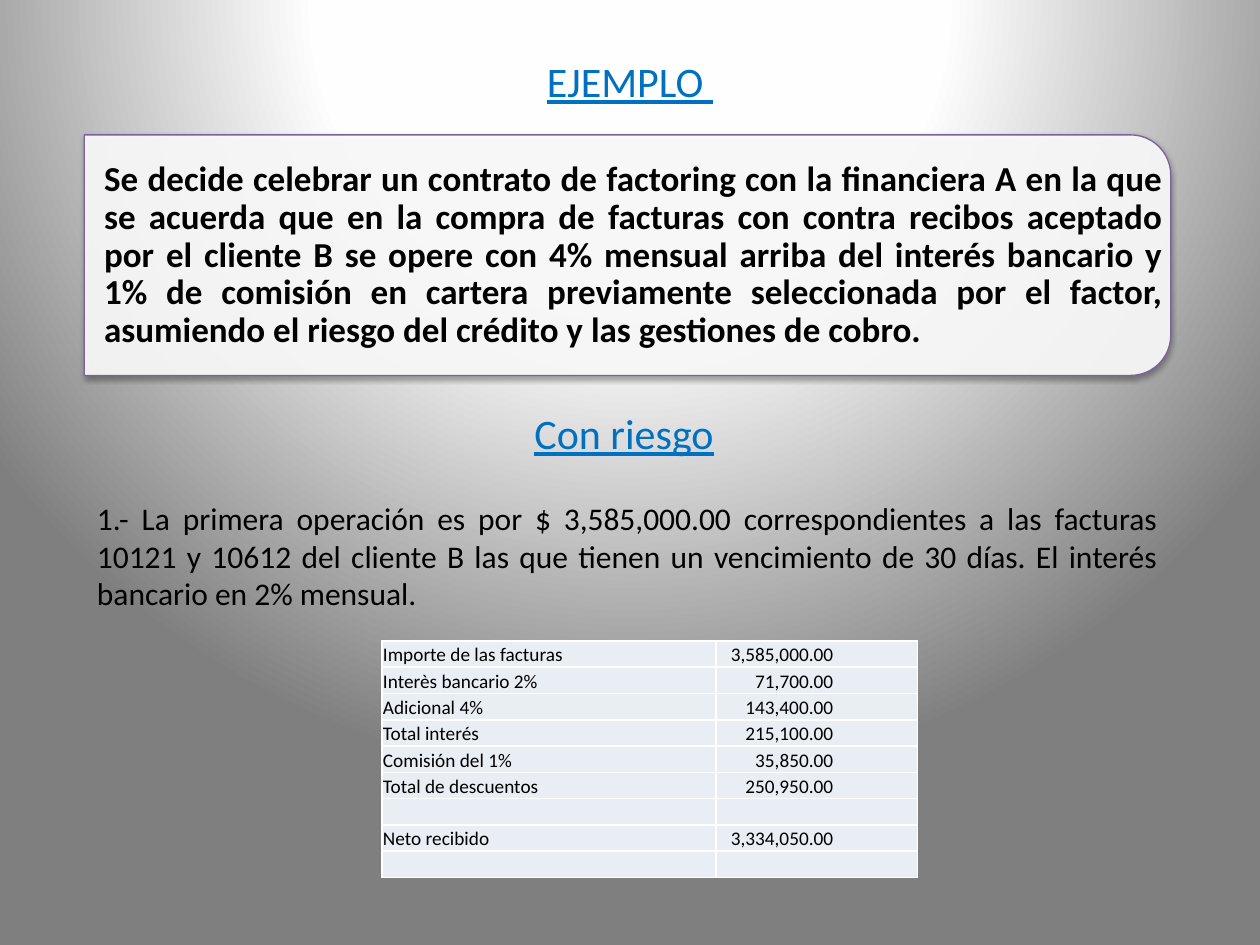
import dataclasses

import lxml.etree as etree
import pptx
import pptx.dml.color
import pptx.enum.shapes
import pptx.enum.text
import pptx.oxml
import pptx.oxml.ns
import pptx.util

Cm = pptx.util.Cm
Pt = pptx.util.Pt
qn = pptx.oxml.ns.qn
Align = pptx.enum.text.PP_ALIGN
Anchor = pptx.enum.text.MSO_ANCHOR
RGBColor = pptx.dml.color.RGBColor


@dataclasses.dataclass(frozen=True)
class Theme:
    font: str = "Calibri"
    heading: str = "0070C0"
    text: str = "000000"
    panel: str = "FFFFFF"
    panel_line: str = "7D60A0"
    cell: str = "E9EDF4"
    border: str = "FFFFFF"
    background: tuple = ((0, "FFFFFF"), (40, "FEFEFE"), (100, "7F7F7F"))
    heading_size: int = 24
    statement_size: int = 20
    body_size: int = 18
    table_size: int = 11


THEME = Theme()

STATEMENT = (
    "Se decide celebrar un contrato de factoring con la financiera A en la que "
    "se acuerda que en la compra de facturas con contra recibos aceptado por el "
    "cliente B se opere con 4% mensual arriba del interés bancario y 1% de "
    "comisión en cartera previamente seleccionada por el factor, asumiendo el "
    "riesgo del crédito y las gestiones de cobro."
)
OPERATION = (
    "1.- La primera operación es por $ 3,585,000.00 correspondientes a las "
    "facturas 10121 y 10612 del cliente B las que tienen un vencimiento de "
    "30 días. El interés bancario en 2% mensual."
)
SETTLEMENT = [
    ("Importe de las facturas", "3,585,000.00"),
    ("Interès bancario 2%", "71,700.00"),
    ("Adicional 4%", "143,400.00"),
    ("Total interés", "215,100.00"),
    ("Comisión del 1%", "35,850.00"),
    ("Total de descuentos", "250,950.00"),
    ("", ""),
    ("Neto recibido", "3,334,050.00"),
    ("", ""),
]


def add_element(parent, tag, **attributes):
    return etree.SubElement(parent, qn(tag), **attributes)


def place(shape, left, top, width, height):
    shape.left, shape.top = Cm(left), Cm(top)
    shape.width, shape.height = Cm(width), Cm(height)


def format_paragraph(paragraph, size, color, alignment, bold=False, underline=False):
    paragraph.alignment = alignment
    font = paragraph.font
    font.name, font.size = THEME.font, Pt(size)
    font.bold, font.underline = bold, underline
    font.color.rgb = RGBColor.from_string(color)


def set_text(shape, text, **style):
    frame = shape.text_frame
    frame.word_wrap = True
    frame.auto_size = pptx.enum.text.MSO_AUTO_SIZE.NONE
    frame.vertical_anchor = Anchor.TOP
    frame.text = text
    paragraph = frame.paragraphs[0]
    paragraph.space_before = Pt(0)
    format_paragraph(paragraph, **style)
    return frame


def set_heading(shape, text):
    set_text(shape, text, size=THEME.heading_size, color=THEME.heading,
             alignment=Align.CENTER, underline=True)


def set_background(slide):
    fill = slide.background.fill
    fill.gradient()
    gradient = slide.element.find(".//" + qn("a:gradFill"))
    for child in list(gradient):
        gradient.remove(child)
    stops = add_element(gradient, "a:gsLst")
    for position, color in THEME.background:
        stop = add_element(stops, "a:gs", pos=str(position * 1000))
        add_element(stop, "a:srgbClr", val=color)
    circle = add_element(gradient, "a:path", path="circle")
    add_element(circle, "a:fillToRect", l="50000", t="-80000", r="50000", b="180000")


def add_panel(slide, left, top, width, height):
    """Panel with rounded right corners: an upright shape turned by 90 degrees."""
    shift = (width - height) / 2
    panel = slide.shapes.add_shape(
        pptx.enum.shapes.MSO_SHAPE.ROUND_2_SAME_RECTANGLE,
        Cm(left + shift), Cm(top - shift), Cm(height), Cm(width))
    panel.rotation = 90
    panel.fill.solid()
    panel.fill.fore_color.rgb = RGBColor.from_string(THEME.panel)
    fill_color = panel.element.spPr.find(qn("a:solidFill"))[0]
    add_element(fill_color, "a:alpha", val="90000")
    panel.line.color.rgb = RGBColor.from_string(THEME.panel_line)
    panel.line.width = Pt(0.75)
    panel.shadow.inherit = False
    effects = panel.element.spPr.find(qn("a:effectLst"))
    shadow = add_element(effects, "a:outerShdw", blurRad=str(Pt(3.1)),
                         dist=str(Pt(1.8)), dir="5400000", rotWithShape="0")
    shadow_color = add_element(shadow, "a:srgbClr", val="000000")
    add_element(shadow_color, "a:alpha", val="35000")


def add_text_box(slide, left, top, width, height):
    return slide.shapes.add_textbox(Cm(left), Cm(top), Cm(width), Cm(height))


def format_cell(cell, text, alignment, margin_right):
    cell.margin_left = cell.margin_top = Cm(0.02)
    cell.margin_bottom = Cm(0)
    cell.margin_right = Cm(margin_right)
    cell.vertical_anchor = Anchor.BOTTOM
    cell.text = text
    paragraph = cell.text_frame.paragraphs[0]
    format_paragraph(paragraph, THEME.table_size, THEME.text, alignment)
    if not text:
        # Keeps empty rows as low as the others
        add_element(paragraph._p, "a:endParaRPr", sz=str(THEME.table_size * 100))
    properties = cell._tc.get_or_add_tcPr()
    for side in ("a:lnL", "a:lnR", "a:lnT", "a:lnB"):
        line = add_element(properties, side, w=str(Pt(1)))
        add_element(add_element(line, "a:solidFill"), "a:srgbClr", val=THEME.border)
    cell.fill.solid()
    cell.fill.fore_color.rgb = RGBColor.from_string(THEME.cell)


def add_settlement_table(slide, left, top, column_widths, row_height):
    table = slide.shapes.add_table(
        len(SETTLEMENT), len(column_widths), Cm(left), Cm(top),
        Cm(sum(column_widths)), Cm(row_height * len(SETTLEMENT))).table
    table.first_row = table.horz_banding = False
    for column, width in zip(table.columns, column_widths):
        column.width = Cm(width)
    for row, (concept, amount) in zip(table.rows, SETTLEMENT):
        row.height = Cm(row_height)
        format_cell(row.cells[0], concept, Align.LEFT, 0.02)
        format_cell(row.cells[1], amount, Align.RIGHT, 1.7)


def main():
    presentation = pptx.Presentation()
    presentation.slide_width, presentation.slide_height = Cm(25.4), Cm(19.05)
    slide = presentation.slides.add_slide(presentation.slide_layouts[1])
    set_background(slide)

    # Title
    title = slide.shapes.title
    place(title, 3.7, 1, 18, 1.28)
    set_heading(title, "EJEMPLO ")

    # First operation
    operation = slide.placeholders[1]
    place(operation, 1.7, 9.93, 21.9, 2.57)
    frame = set_text(operation, OPERATION, size=THEME.body_size,
                     color=THEME.text, alignment=Align.JUSTIFY)
    properties = frame.paragraphs[0]._p.get_or_add_pPr()
    properties.set("marL", "0")
    properties.set("indent", "0")
    properties.find(qn("a:defRPr")).addprevious(
        pptx.oxml.parse_xml(f"<a:buNone {pptx.oxml.ns.nsdecls('a')}/>"))

    # Contract statement on its panel
    add_panel(slide, 1.7, 2.72, 21.9, 4.85)
    statement = add_text_box(slide, 1.7, 2.97, 21.77, 4.37)
    frame = set_text(statement, STATEMENT, size=THEME.statement_size,
                     color=THEME.text, alignment=Align.JUSTIFY, bold=True)
    frame.vertical_anchor = Anchor.MIDDLE
    frame.margin_left = Cm(0.4)
    frame.margin_top = frame.margin_right = frame.margin_bottom = Cm(0.03)
    frame.paragraphs[0].line_spacing = 0.9

    # Settlement and its heading
    add_settlement_table(slide, 7.7, 12.92, (6.73, 4.07), 0.53)
    set_heading(add_text_box(slide, 3.58, 8.1, 18, 1.28), "Con riesgo")

    presentation.save("out.pptx")


if __name__ == "__main__":
    main()
